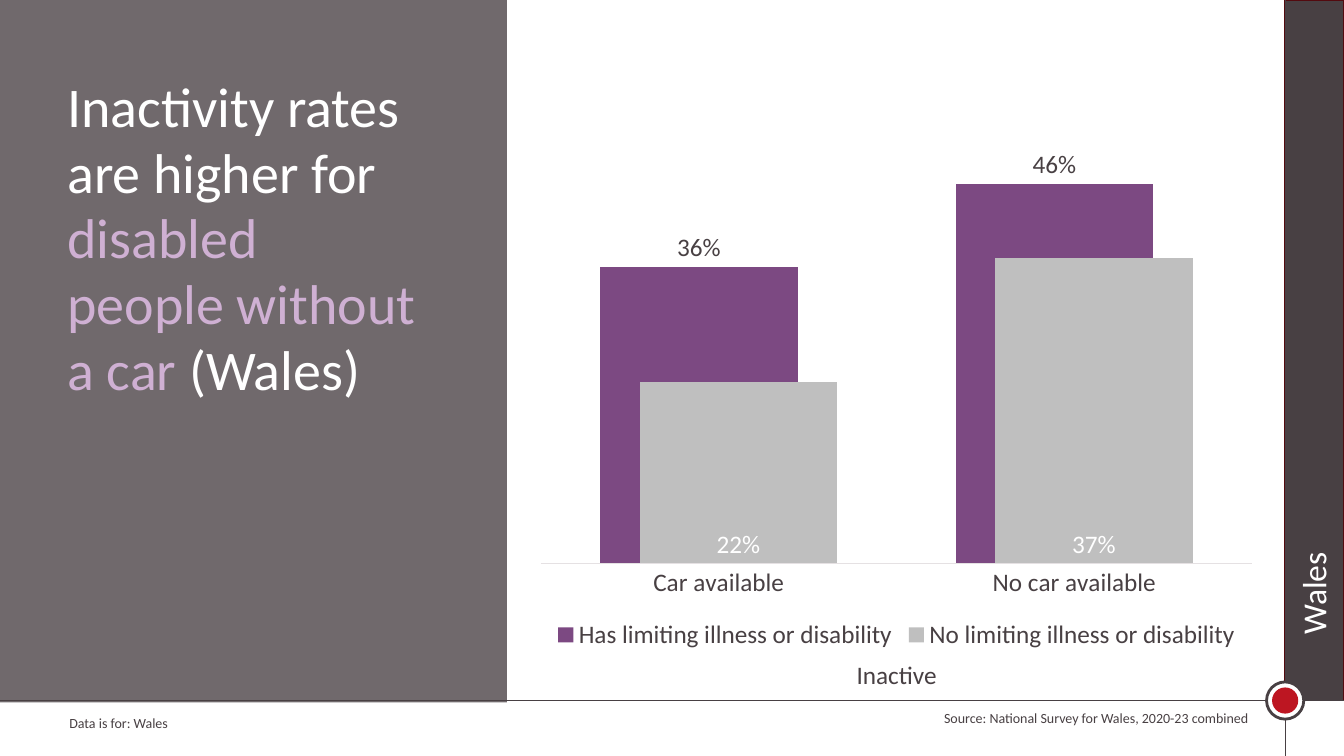
from dataclasses import dataclass

from lxml.etree import SubElement
from pptx import Presentation
from pptx.chart.chart import Chart
from pptx.chart.data import CategoryChartData
from pptx.dml.color import RGBColor
from pptx.enum.chart import XL_CHART_TYPE, XL_LABEL_POSITION, XL_LEGEND_POSITION, XL_TICK_MARK
from pptx.enum.shapes import MSO_CONNECTOR, MSO_SHAPE
from pptx.enum.text import MSO_ANCHOR, MSO_AUTO_SIZE, PP_ALIGN
from pptx.oxml import parse_xml
from pptx.oxml.ns import nsdecls, qn
from pptx.slide import Slide
from pptx.text.text import Font
from pptx.util import Pt


@dataclass(frozen=True)
class Theme:
    font: str = "Calibri"
    dark: str = "484043"
    white: str = "FFFFFF"
    lilac: str = "CFB0D3"
    purple: str = "7C4982"
    grey: str = "BFBFBF"
    axis: str = "E5E1E3"
    red: str = "BD1622"
    rail_edge: str = "530A0F"
    title_size: float = 40
    tab_size: float = 24
    chart_size: float = 18
    note_size: float = 10


@dataclass(frozen=True)
class Box:
    left: float
    top: float
    width: float
    height: float

    def lengths(self) -> tuple[Pt, Pt, Pt, Pt]:
        return Pt(self.left), Pt(self.top), Pt(self.width), Pt(self.height)


@dataclass(frozen=True)
class Block:
    box: Box
    fill: str
    kind: MSO_SHAPE = MSO_SHAPE.RECTANGLE
    line: str | None = None
    line_width: float = 1
    opacity: int = 100


@dataclass(frozen=True)
class Rule:
    start: tuple[float, float]
    end: tuple[float, float]


@dataclass(frozen=True)
class Label:
    text: str
    box: Box
    size: float
    color: str
    align: PP_ALIGN = PP_ALIGN.LEFT
    rotation: float = 0


@dataclass(frozen=True)
class BarSeries:
    name: str
    values: tuple[float, ...]
    fill: str
    label_color: str
    label_position: XL_LABEL_POSITION


THEME = Theme()
WIDTH, HEIGHT = 960, 540
RAIL_X, BASE_Y = 918, 500.4


def centred_dot(diameter: float) -> Box:
    return Box(RAIL_X - diameter / 2, BASE_Y - diameter / 2, diameter, diameter)


RAIL = Block(Box(RAIL_X, 0, WIDTH - RAIL_X, BASE_Y), THEME.dark, line=THEME.rail_edge)
RULES = (Rule((RAIL_X, 0), (RAIL_X, HEIGHT)), Rule((WIDTH, BASE_Y), (0, BASE_Y)))
FRONT_BLOCKS = (
    Block(centred_dot(26.6), THEME.white, MSO_SHAPE.OVAL, THEME.dark, 2),
    Block(centred_dot(18.7), THEME.red, MSO_SHAPE.OVAL),
    Block(Box(-0.7, 0, 362.9, 501.8), THEME.dark, opacity=78),
)
LABELS = (
    Label("Source: National Survey for Wales, 2020-23 combined",
          Box(653.8, 503.3, 244.8, 19.4), THEME.note_size, THEME.dark, PP_ALIGN.RIGHT),
    Label("Data is for: Wales", Box(42.5, 506.9, 316, 19.4), THEME.note_size, THEME.dark),
    Label("Wales", Box(802.8, 307.4, 270, 36), THEME.tab_size, THEME.white, rotation=270),
    Label("Inactive", Box(604.8, 467.3, 87.8, 28.8), THEME.chart_size, THEME.dark),
)
TITLE_BOX = Box(41, 49.7, 268.6, 271.4)
TITLE_RUNS = (
    ("Inactivity rates are higher for ", THEME.white),
    ("disabled people without a car ", THEME.lilac),
    ("(Wales)", THEME.white),
)
CHART_BOX = Box(375.8, 104.4, 529.2, 363.6)
CATEGORIES = ("Car available", "No car available")
SERIES = (
    BarSeries("Has limiting illness or disability", (0.36, 0.46), THEME.purple,
              THEME.dark, XL_LABEL_POSITION.OUTSIDE_END),
    BarSeries("No limiting illness or disability", (0.22, 0.37), THEME.grey,
              THEME.white, XL_LABEL_POSITION.INSIDE_BASE),
)
PLOT_LAYOUT = {"x": 0.02, "y": 0.01, "w": 0.96, "h": 0.81}


def rgb(color: str) -> RGBColor:
    return RGBColor.from_string(color)


def style_font(font: Font, size: float, color: str) -> None:
    font.name = THEME.font
    font.size = Pt(size)
    font.color.rgb = rgb(color)


def draw_block(slide: Slide, block: Block) -> None:
    shape = slide.shapes.add_shape(block.kind, *block.box.lengths())
    shape.shadow.inherit = False
    shape.fill.solid()
    shape.fill.fore_color.rgb = rgb(block.fill)
    if block.opacity < 100:
        color = shape.fill._xPr.find(f".//{qn('a:srgbClr')}")
        SubElement(color, qn("a:alpha"), val=str(block.opacity * 1000))
    if block.line:
        shape.line.color.rgb = rgb(block.line)
        shape.line.width = Pt(block.line_width)
    else:
        shape.line.fill.background()


def draw_rule(slide: Slide, rule: Rule) -> None:
    points = (Pt(value) for value in rule.start + rule.end)
    connector = slide.shapes.add_connector(MSO_CONNECTOR.STRAIGHT, *points)
    connector.line.color.rgb = rgb(THEME.dark)
    connector.line.width = Pt(0.5)
    SubElement(connector._element.spPr, qn("a:effectLst"))


def draw_label(slide: Slide, label: Label) -> None:
    shape = slide.shapes.add_textbox(*label.box.lengths())
    shape.rotation = label.rotation
    shape.text_frame.word_wrap = True
    paragraph = shape.text_frame.paragraphs[0]
    paragraph.text = label.text
    paragraph.alignment = label.align
    style_font(paragraph.font, label.size, label.color)


def fill_title(slide: Slide) -> None:
    title = slide.shapes.title
    title.left, title.top, title.width, title.height = TITLE_BOX.lengths()
    frame = title.text_frame
    frame.auto_size = MSO_AUTO_SIZE.NONE
    frame.vertical_anchor = MSO_ANCHOR.TOP
    frame.word_wrap = True
    frame.margin_right = Pt(10)
    paragraph = frame.paragraphs[0]
    paragraph.alignment = PP_ALIGN.LEFT
    paragraph.line_spacing = 0.98
    style_font(paragraph.font, THEME.title_size, THEME.white)
    for text, color in TITLE_RUNS:
        run = paragraph.add_run()
        run.text = text
        run.font.color.rgb = rgb(color)
    slide.shapes._spTree.append(title._element)


def place_plot(chart: Chart) -> None:
    sides = "".join(f'<c:{key}Mode val="edge"/>' for key in "xy")
    sizes = "".join(f'<c:{key} val="{value}"/>' for key, value in PLOT_LAYOUT.items())
    layout = parse_xml(f'<c:layout {nsdecls("c")}><c:manualLayout><c:layoutTarget val="inner"/>'
                       f"{sides}{sizes}</c:manualLayout></c:layout>")
    plot_area = chart._chartSpace.chart.plotArea
    for existing in plot_area.findall(qn("c:layout")):
        plot_area.remove(existing)
    plot_area.insert(0, layout)


def draw_chart(slide: Slide) -> None:
    data = CategoryChartData(number_format="0%")
    data.categories = CATEGORIES
    for item in SERIES:
        data.add_series(item.name, item.values)
    chart = slide.shapes.add_chart(
        XL_CHART_TYPE.COLUMN_CLUSTERED, *CHART_BOX.lengths(), data).chart
    chart.has_title = False
    style_font(chart.font, THEME.chart_size, THEME.dark)
    chart.has_legend = True
    chart.legend.position = XL_LEGEND_POSITION.BOTTOM
    chart.legend.include_in_layout = False
    style_font(chart.legend.font, THEME.chart_size, THEME.dark)
    value_axis, category_axis = chart.value_axis, chart.category_axis
    value_axis.minimum_scale, value_axis.maximum_scale = 0, 0.5
    value_axis.has_major_gridlines = False
    value_axis.visible = False
    category_axis.major_tick_mark = XL_TICK_MARK.NONE
    category_axis.format.line.color.rgb = rgb(THEME.axis)
    category_axis.format.line.width = Pt(0.75)
    style_font(category_axis.tick_labels.font, THEME.chart_size, THEME.dark)
    plot = chart.plots[0]
    plot.gap_width, plot.overlap = 60, 80
    plot.vary_by_categories = False
    for item, series in zip(SERIES, plot.series):
        series.format.fill.solid()
        series.format.fill.fore_color.rgb = rgb(item.fill)
        labels = series.data_labels
        labels.show_value = True
        labels.number_format, labels.number_format_is_linked = "0%", False
        labels.position = item.label_position
        style_font(labels.font, THEME.chart_size, item.label_color)
    place_plot(chart)


def main() -> None:
    presentation = Presentation()
    presentation.slide_width, presentation.slide_height = Pt(WIDTH), Pt(HEIGHT)
    slide = presentation.slides.add_slide(presentation.slide_layouts.get_by_name("Title Only"))
    draw_block(slide, RAIL)
    for rule in RULES:
        draw_rule(slide, rule)
    for block in FRONT_BLOCKS:
        draw_block(slide, block)
    fill_title(slide)
    draw_chart(slide)
    for label in LABELS:
        draw_label(slide, label)
    presentation.save("out.pptx")


if __name__ == "__main__":
    main()
